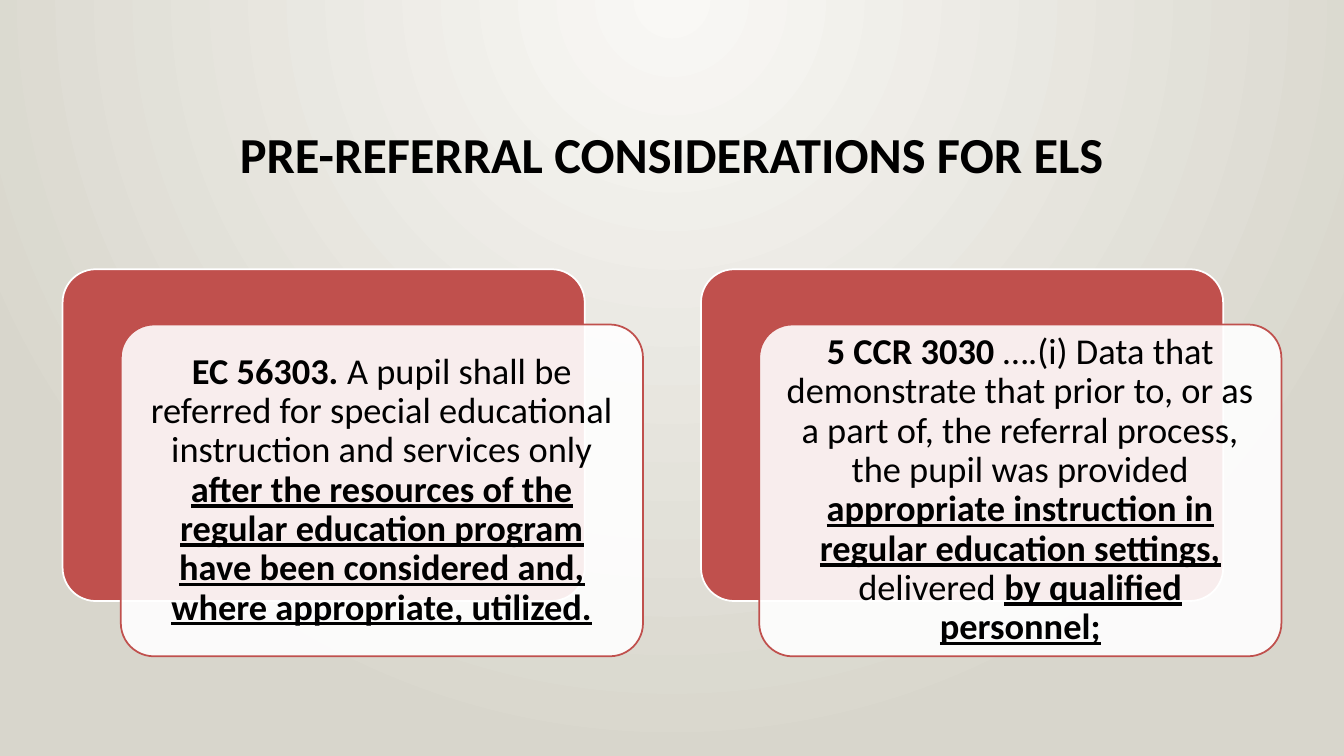
from lxml import etree
from pptx import Presentation
from pptx import util as u
from pptx.dml.color import RGBColor
from pptx.enum import shapes, text
from pptx.oxml.ns import qn

COLORS = {
    "light": "F9F8F5",
    "stone": "D8D6CC",
    "red": "C0504D",
    "white": "FFFFFF",
    "black": "000000",
}
PLAIN = {}
BOLD = {"bold": True}
STRESS = {"bold": True, "underline": True}


def color(name):
    return RGBColor.from_string(COLORS[name])


def add_text(paragraph, words, size=26, bold=False, underline=False):
    run = paragraph.add_run()
    run.text = words
    run.font.name = "Calibri"
    run.font.size = u.Pt(size)
    run.font.bold = bold
    run.font.underline = underline
    run.font.color.rgb = color("black")


class SlideBuilder:
    def __init__(self, slide, line_width=1.25, line_spacing=0.9):
        self.slide = slide
        self.line_width = line_width
        self.line_spacing = line_spacing

    def background(self, inner, outer):
        fill = self.slide.background.fill
        fill.gradient()
        for stop, name in zip(fill.gradient_stops, (inner, outer)):
            stop.color.rgb = color(name)
        # Circular gradient that starts at the middle of the top edge
        gradient = self.slide.element.find(".//" + qn("a:gradFill"))
        linear = gradient.find(qn("a:lin"))
        circle = etree.Element(qn("a:path"), path="circle")
        etree.SubElement(circle, qn("a:fillToRect"), l="43000", r="43000", b="100000")
        gradient.replace(linear, circle)

    def panel(self, left, top, width, height, fill, line, opacity=100):
        shape = self.slide.shapes.add_shape(
            shapes.MSO_SHAPE.ROUNDED_RECTANGLE,
            u.Pt(left), u.Pt(top), u.Pt(width), u.Pt(height))
        shape.adjustments[0] = 0.1
        shape.shadow.inherit = False
        shape.fill.solid()
        shape.fill.fore_color.rgb = color(fill)
        shape.line.color.rgb = color(line)
        shape.line.width = u.Pt(self.line_width)
        if opacity < 100:
            fill_color = shape.element.spPr.find(qn("a:solidFill"))[0]
            etree.SubElement(fill_color, qn("a:alpha"), val=str(opacity * 1000))

    def text_box(self, left, top, width, height, runs, margin):
        box = self.slide.shapes.add_textbox(
            u.Pt(left), u.Pt(top), u.Pt(width), u.Pt(height))
        frame = box.text_frame
        frame.word_wrap = True
        frame.vertical_anchor = text.MSO_ANCHOR.MIDDLE
        frame.margin_left = frame.margin_right = u.Pt(margin)
        frame.margin_top = frame.margin_bottom = u.Pt(margin)
        paragraph = frame.paragraphs[0]
        paragraph.alignment = text.PP_ALIGN.CENTER
        paragraph.line_spacing = self.line_spacing
        for words, style in runs:
            add_text(paragraph, words, **style)

    def card(self, left, top, runs, width=373, height=237):
        shift_x, shift_y, inset = 41.6, 39.5, 6.8
        self.panel(left, top, width, height, "red", "white")
        left, top = left + shift_x, top + shift_y
        self.panel(left, top, width, height, "white", "red", opacity=90)
        self.text_box(left + inset, top + inset, width - 2 * inset,
                      height - 2 * inset, runs, margin=7.8)


def main():
    presentation = Presentation()
    presentation.slide_width = u.Pt(960)
    presentation.slide_height = u.Pt(540)
    slide = presentation.slides.add_slide(presentation.slide_layouts[6])
    builder = SlideBuilder(slide)

    # Background and title
    builder.background("light", "stone")
    title = [("PRE-REFERRAL CONSIDERATIONS FOR ELS", {"size": 36, "bold": True})]
    builder.text_box(72, 49, 816, 126, title, margin=7.2)

    # Two regulation cards
    cards = [
        [
            ("EC 56303.", BOLD),
            (" A pupil shall be referred for special educational instruction "
             "and services only ", PLAIN),
            ("after the resources of the regular education program have been "
             "considered and, where appropriate, utilized.", STRESS),
        ],
        [
            ("5 CCR 3030 ", BOLD),
            ("….(i) Data that demonstrate that prior to, or as a part of, the "
             "referral process, the pupil was provided ", PLAIN),
            ("appropriate instruction in regular education settings,", STRESS),
            (" delivered ", PLAIN),
            ("by qualified personnel;", STRESS),
        ],
    ]
    for index, runs in enumerate(cards):
        builder.card(44.7 + index * 456, 192.3, runs)

    presentation.save("out.pptx")


if __name__ == "__main__":
    main()
